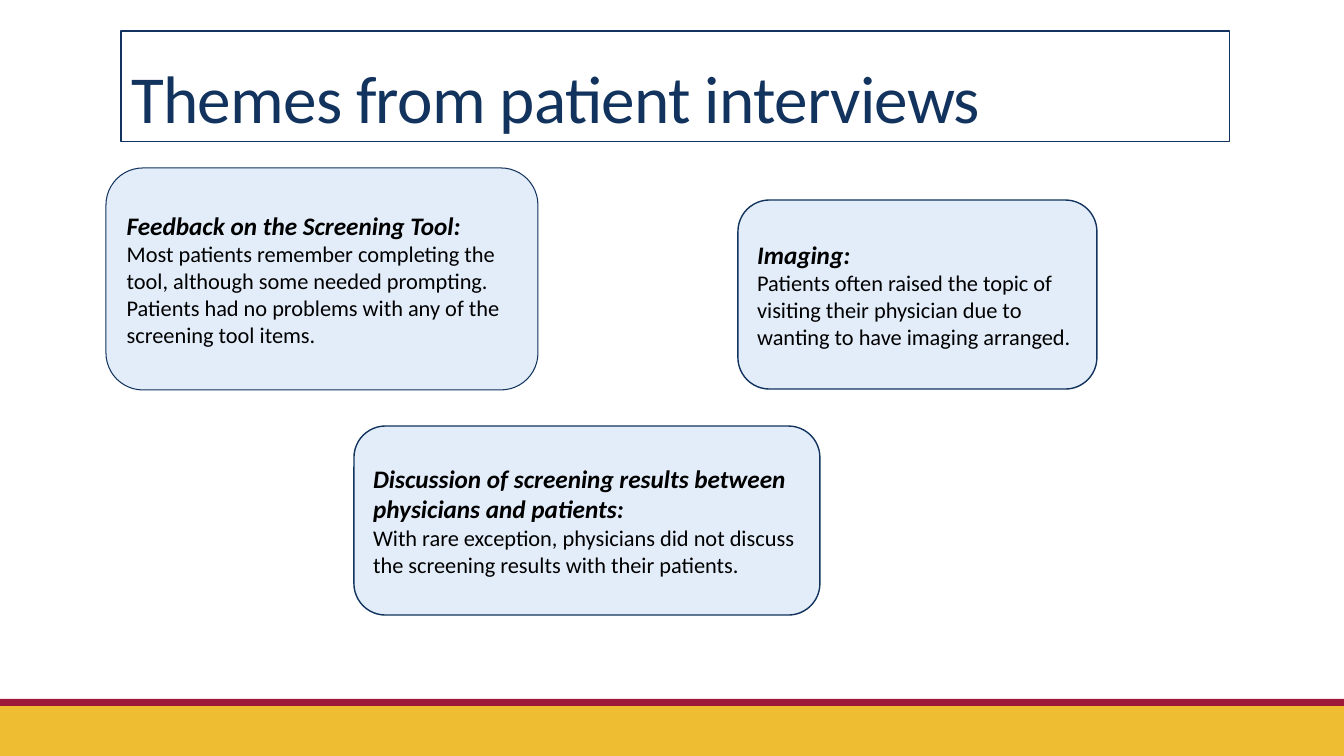
from lxml.etree import SubElement
from pptx import Presentation
from pptx.dml.color import RGBColor
from pptx.enum.shapes import MSO_SHAPE
from pptx.enum.text import MSO_ANCHOR, MSO_AUTO_SIZE, PP_ALIGN
from pptx.oxml.ns import qn
from pptx.util import Pt

PX = 914400 / 100.8
WIDE, HIGH = 1344, 756
NAVY = RGBColor(0x11, 0x33, 0x5D)
SKY = RGBColor(0xBB, 0xD4, 0xF3)
GOLD = RGBColor(0xEE, 0xBD, 0x31)
WINE = RGBColor(0x9D, 0x19, 0x39)
BLACK = RGBColor(0, 0, 0)


def scale(*sizes):
    """Turn px lengths into EMU."""
    return [round(size * PX) for size in sizes]


def block(kind, box, color):
    """Add a filled shape without shadow."""
    shape = slide.shapes.add_shape(kind, *scale(*box))
    shape.shadow.inherit = False
    shape.fill.solid()
    shape.fill.fore_color.rgb = color
    return shape


deck = Presentation()
deck.slide_width, deck.slide_height = scale(WIDE, HIGH)
slide = deck.slides.add_slide(deck.slide_layouts[5])

# Footer bands
for top, tall, color in [(706, 50, GOLD), (699, 7, WINE)]:
    band = block(MSO_SHAPE.RECTANGLE, (0, top, WIDE, tall), color)
    band.line.fill.background()

# Title
title = slide.shapes.title
title.left, title.top, title.width, title.height = scale(121, 31, 1109, 111)
title.line.color.rgb = NAVY
title.line.width = Pt(0.75)
frame = title.text_frame
frame.text = "Themes from patient interviews"
frame.auto_size = MSO_AUTO_SIZE.NONE
frame.vertical_anchor = MSO_ANCHOR.BOTTOM
head = frame.paragraphs[0]
head.alignment = PP_ALIGN.LEFT
head.line_spacing = 0.85
head.font.name = "Calibri"
head.font.size = Pt(48)
head.font.color.rgb = NAVY
head.runs[0].font._element.set("spc", "-50")

# Theme cards: box, line width, heading and findings
cards = [
    ((106, 168, 432, 222), 0.75, [
        "Feedback on the Screening Tool:",
        "Most patients remember completing the tool, although some needed prompting.",
        "Patients had no problems with any of the screening tool items."]),
    ((354, 426, 466, 189), 1, [
        "Discussion of screening results between physicians and patients:",
        "With rare exception, physicians did not discuss the screening results "
        "with their patients."]),
    ((738, 200, 359, 189), 1, [
        "Imaging:",
        "Patients often raised the topic of visiting their physician due to "
        "wanting to have imaging arranged."]),
]
for box, weight, lines in cards:
    card = block(MSO_SHAPE.ROUNDED_RECTANGLE, box, SKY)
    tint = card.fill._xPr.find(qn("a:solidFill"))[0]
    SubElement(tint, qn("a:alpha"), val="40000")
    card.line.color.rgb = NAVY
    card.line.width = Pt(weight)
    frame = card.text_frame
    frame.word_wrap = True
    frame.vertical_anchor = MSO_ANCHOR.MIDDLE
    frame.text = "\n".join(lines)
    for index, para in enumerate(frame.paragraphs):
        first = index == 0
        para.alignment = PP_ALIGN.LEFT
        para.font.name = "Calibri"
        para.font.size = Pt(18 if first else 16)
        para.font.bold = para.font.italic = first
        para.font.color.rgb = BLACK

deck.save("out.pptx")
